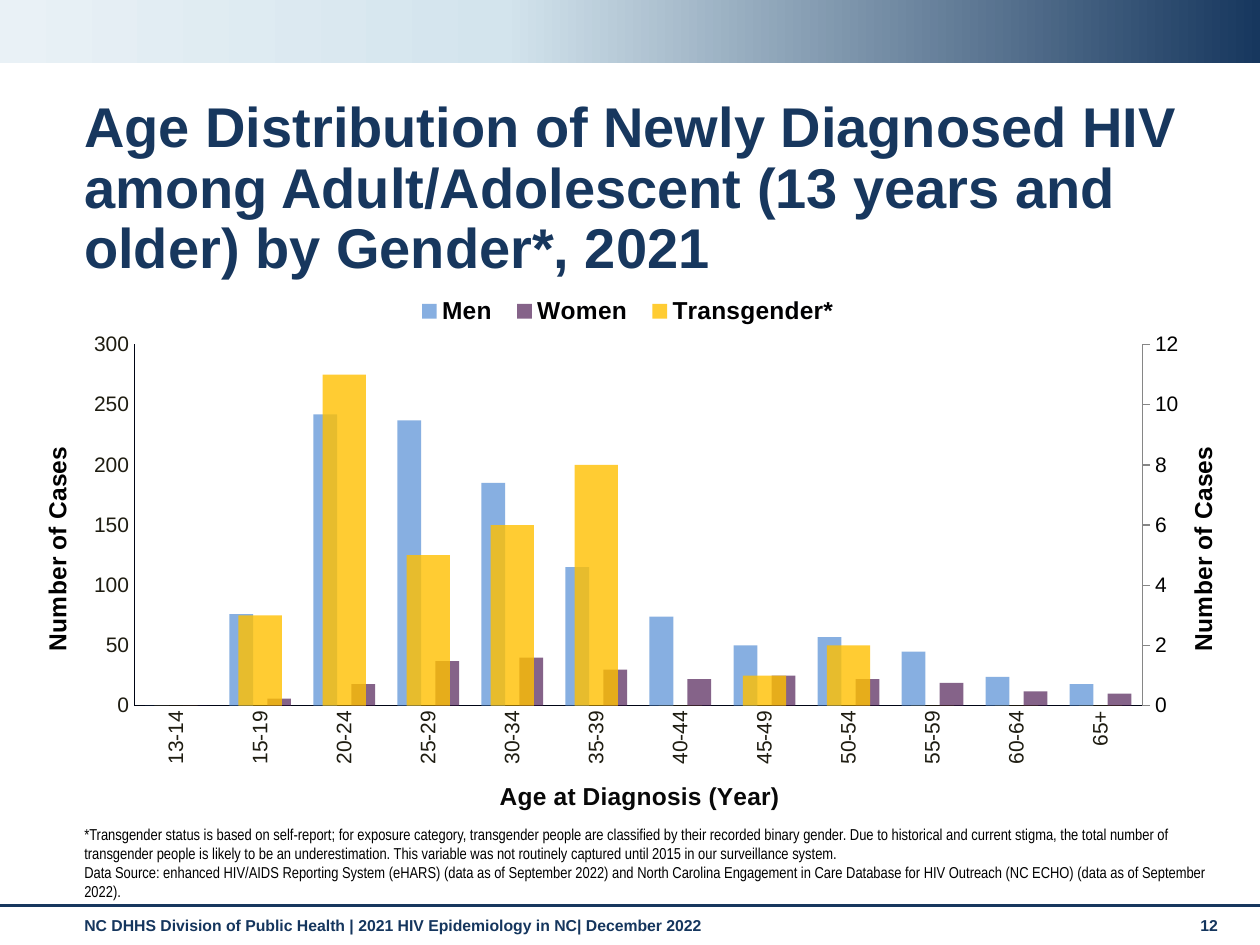
from copy import deepcopy

from lxml.etree import SubElement
from pptx import Presentation
from pptx.chart.axis import CategoryAxis, ValueAxis
from pptx.chart.data import CategoryChartData
from pptx.dml.color import RGBColor
from pptx.enum.chart import XL_CHART_TYPE as CT, XL_LEGEND_POSITION as LP, XL_TICK_MARK as TM
from pptx.enum.shapes import MSO_CONNECTOR as MC, MSO_SHAPE as MS
from pptx.enum.text import MSO_ANCHOR as MA
from pptx.oxml import parse_xml
from pptx.oxml.ns import nsdecls, qn
from pptx.util import Cm, Pt

NAVY = "17375E"
FOOTER = "15365E"
AXIS_TEXT = "1E1C11"
AXIS_LINE = "000514"
UPRIGHT = "-5400000"
TITLE = ("Age Distribution of Newly Diagnosed HIV among Adult/Adolescent "
         "(13 years and older) by Gender*, 2021")
NOTES = [
    "*Transgender status is based on self-report; for exposure category, transgender people are "
    "classified by their recorded binary gender. Due to historical and current stigma, the total "
    "number of transgender people is likely to be an underestimation. This variable was not "
    "routinely captured until 2015 in our surveillance system.",
    "Data Source: enhanced HIV/AIDS Reporting System (eHARS) (data as of September 2022) and North "
    "Carolina Engagement in Care Database for HIV Outreach (NC ECHO) (data as of September 2022).",
]
AGES = ["13-14", "15-19", "20-24", "25-29", "30-34", "35-39",
        "40-44", "45-49", "50-54", "55-59", "60-64", "65+"]
SERIES = [
    ("Men", [0, 76, 242, 237, 185, 115, 74, 50, 57, 45, 24, 18], "558ED5", 70),
    ("Women", [0, 6, 18, 37, 40, 30, 22, 25, 22, 19, 12, 10], "522258", 70),
    ("Transgender*", [0, 3, 11, 5, 6, 8, 0, 1, 2, 0, 0, 0], "FFC000", 80),
]


def rgb(value):
    """Turn a hex string into a colour."""
    return RGBColor.from_string(value)


def set_font(font, size, color, bold=False, name="Arial"):
    """Set the look of a font."""
    font.name, font.size, font.bold = name, Pt(size), bold
    font.color.rgb = rgb(color)


def add_text(s, box, paragraphs, size, color, bold=False, name="Arial", anchor=MA.TOP, spacing=None):
    """Add a wrapped text box with one run per paragraph."""
    tf = s.shapes.add_textbox(*map(Cm, box)).text_frame
    tf.word_wrap, tf.vertical_anchor = True, anchor
    for i, text in enumerate(paragraphs):
        p = tf.add_paragraph() if i else tf.paragraphs[0]
        p.line_spacing = spacing
        r = p.add_run()
        r.text = text
        set_font(r.font, size, color, bold, name)


def add_banner(s):
    """Add the gradient band across the top."""
    sp = s.shapes.add_shape(MS.RECTANGLE, 0, 0, Cm(25.4), Cm(1.27))
    sp.shadow.inherit = False
    sp.line.fill.background()
    sp.fill.gradient()
    sp.fill.gradient_angle = 180
    stops = sp._element.spPr.find(".//" + qn("a:gsLst"))
    stops.append(deepcopy(stops[-1]))
    for stop, color, position in zip(sp.fill.gradient_stops, (NAVY, "D3E4ED", "E9F1F6"), (0, 0.6, 1)):
        stop.color.rgb = rgb(color)
        stop.position = position


def add_rule(s, y):
    """Add the full-width line above the footer."""
    line = s.shapes.add_connector(MC.STRAIGHT, 0, Cm(y), Cm(25.4), Cm(y))
    line.line.color.rgb = rgb(NAVY)
    line.line.width = Pt(1.75)
    SubElement(line._element.spPr, qn("a:effectLst"))


def format_axis(axis, color, line, width, tick=TM.NONE):
    """Set tick labels, tick marks and line of an axis."""
    axis.has_major_gridlines = False
    axis.major_tick_mark, axis.minor_tick_mark = tick, TM.NONE
    set_font(axis.tick_labels.font, 12, color)
    axis.format.line.color.rgb = rgb(line)
    axis.format.line.width = Pt(width)


def add_axis_title(axis, text, color, rotation="0"):
    """Give an axis a bold title."""
    tf = axis.axis_title.text_frame
    r = tf.paragraphs[0].add_run()
    r.text = text
    set_font(r.font, 14, color, True)
    tf._txBody.bodyPr.set("rot", rotation)


def set_scale(axis, top, step):
    """Fix the range of a value axis."""
    axis.minimum_scale, axis.maximum_scale, axis.major_unit = 0, top, step


def set_layout(part, index, box, target=""):
    """Place a chart part by percentages of the chart."""
    for old in part.findall(qn("c:layout")):
        part.remove(old)
    sizes = "".join(f'<c:{tag} val="{v / 100}"/>' for tag, v in zip("xywh", box))
    part.insert(index, parse_xml(
        f'<c:layout {nsdecls("c")}><c:manualLayout>{target}'
        f'<c:xMode val="edge"/><c:yMode val="edge"/>{sizes}</c:manualLayout></c:layout>'))


def move_last_to_right_axis(chart):
    """Move the last series to a second bar group with its own axes."""
    bars = chart.plots[0]._element
    cat, val = chart.category_axis._element, chart.value_axis._element
    right_bars, right_cat, right_val = map(deepcopy, (bars, cat, val))
    bars.remove(bars.findall(qn("c:ser"))[-1])
    for ser in right_bars.findall(qn("c:ser"))[:-1]:
        right_bars.remove(ser)
    bars.addnext(right_bars)
    val.addnext(right_val)
    right_val.addnext(right_cat)
    ids = {cat.find(qn("c:axId")).get("val"): "101", val.find(qn("c:axId")).get("val"): "102"}
    for part in (right_bars, right_cat, right_val):
        for tag in ("c:axId", "c:crossAx"):
            for ref in part.findall(qn(tag)):
                ref.set("val", ids[ref.get("val")])
    right_val.find(qn("c:axPos")).set("val", "r")
    right_val.find(qn("c:crosses")).set("val", "max")
    hidden = CategoryAxis(right_cat)
    hidden.has_title = hidden.visible = False
    return ValueAxis(right_val)


def add_case_chart(s):
    """Add the column chart of cases by age and gender."""
    data = CategoryChartData()
    data.categories = AGES
    for name, values, _, _ in SERIES:
        data.add_series(name, values)
    frame = s.shapes.add_chart(CT.COLUMN_CLUSTERED, Cm(0.74), Cm(5.82), Cm(23.95), Cm(11.35), data)
    chart = frame.chart
    set_font(chart.font, 18, "000000", True)
    chart.has_title = False
    chart.has_legend = True
    chart.legend.position, chart.legend.include_in_layout = LP.TOP, False
    set_font(chart.legend.font, 14, "000002", True)
    set_layout(chart.legend._element, 1, (31, 1, 37.5, 6))

    plot = chart.plots[0]
    plot.gap_width, plot.overlap, plot.vary_by_categories = 94, -60, False
    for ser, (_, _, color, alpha) in zip(plot.series, SERIES):
        ser.format.fill.solid()
        ser.format.fill.fore_color.rgb = rgb(color)
        ser.invert_if_negative = False
        fill = ser._element.find(".//" + qn("a:srgbClr"))
        SubElement(fill, qn("a:alpha")).set("val", str(alpha * 1000))

    cat, val = chart.category_axis, chart.value_axis
    for axis in (cat, val):
        format_axis(axis, AXIS_TEXT, AXIS_LINE, 0.33)
    cat._element.find(qn("c:txPr")).find(qn("a:bodyPr")).set("rot", UPRIGHT)
    add_axis_title(cat, " Age at Diagnosis (Year)", "080808")
    add_axis_title(val, "Number of Cases", "000000", UPRIGHT)
    set_scale(val, 300, 50)

    right = move_last_to_right_axis(chart)
    format_axis(right, "000000", "868686", 0.75, TM.OUTSIDE)
    set_scale(right, 12, 2)
    set_layout(plot._element.getparent(), 0, (8.2, 9.9, 84.9, 64.2), '<c:layoutTarget val="inner"/>')


def main():
    """Build the slide and save it."""
    prs = Presentation()
    prs.slide_width, prs.slide_height = Cm(25.4), Cm(19.05)
    s = prs.slides.add_slide(prs.slide_layouts[6])
    add_text(s, (1.45, 18.34, 22.2, 0.74),
             ["NC DHHS Division of Public Health | 2021 HIV Epidemiology in NC| December 2022"],
             9, FOOTER, True)
    add_text(s, (23.95, 18.34, 1.12, 0.76), ["12"], 9, FOOTER, True)
    add_banner(s)
    add_rule(s, 18.26)
    add_text(s, (1.45, 1.88, 23.95, 1.52), [TITLE], 32, NAVY, True, spacing=0.9)
    add_case_chart(s)
    add_text(s, (1.45, 17.75, 23.6, 0.53), NOTES, 9, "000000", name="Arial Narrow", anchor=MA.BOTTOM)
    prs.save("out.pptx")


if __name__ == "__main__":
    main()
